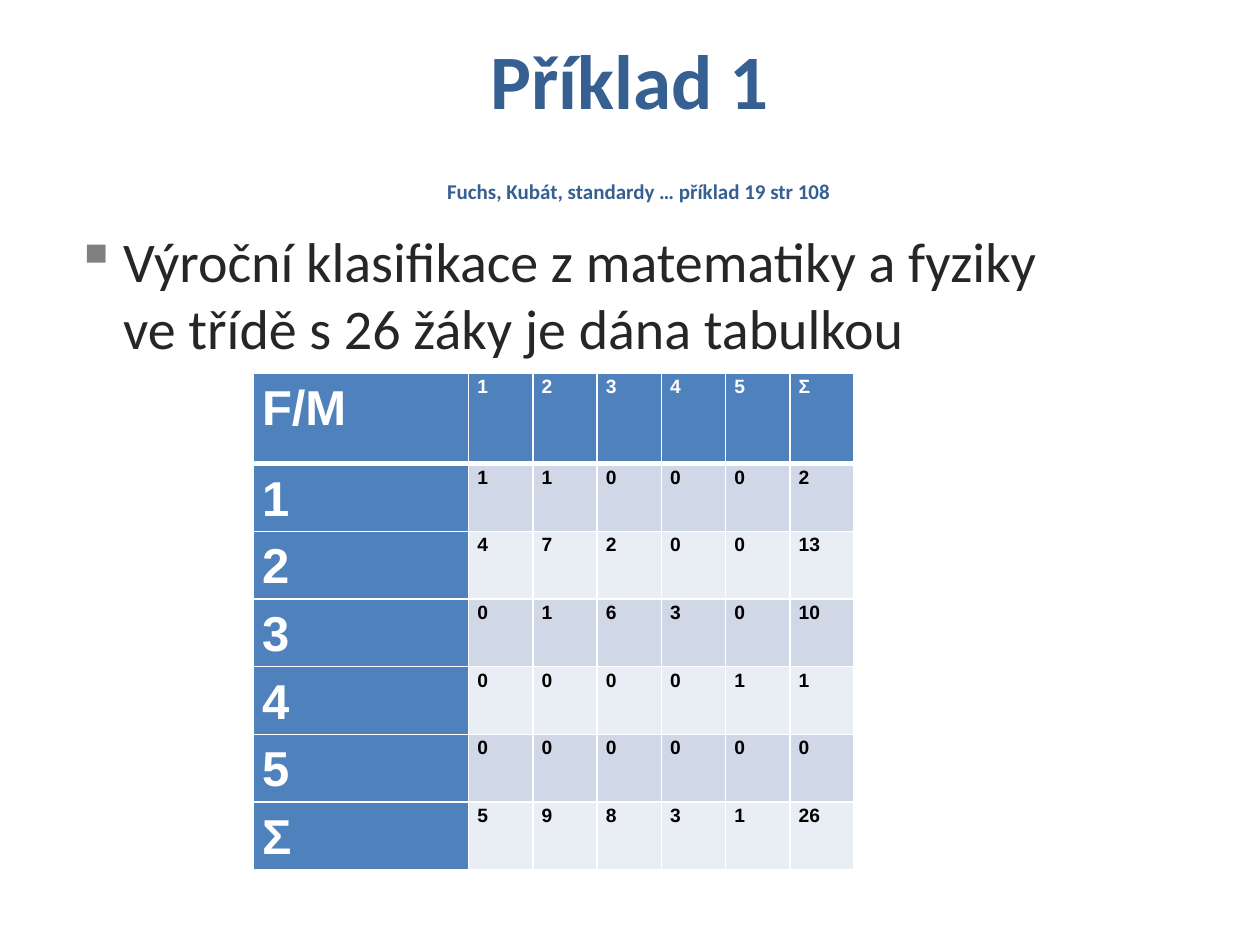
import pptx
import pptx.dml.color
import pptx.enum.text
import pptx.oxml
import pptx.oxml.ns
import pptx.util
from dataclasses import dataclass

Inches, Pt = pptx.util.Inches, pptx.util.Pt

TITLE = "Příklad 1"
SOURCE_NOTE = "Fuchs, Kubát, standardy … příklad 19 str 108"
TASK = "Výroční klasifikace z matematiky a fyziky\vve třídě s 26 žáky je dána tabulkou"
GRADES = [
    ["F/M", "1", "2", "3", "4", "5", "Σ"],
    ["1", 1, 1, 0, 0, 0, 2],
    ["2", 4, 7, 2, 0, 0, 13],
    ["3", 0, 1, 6, 3, 0, 10],
    ["4", 0, 0, 0, 0, 1, 1],
    ["5", 0, 0, 0, 0, 0, 0],
    ["Σ", 5, 9, 8, 3, 1, 26],
]


@dataclass(frozen=True)
class Theme:
    heading_font: str = "Calibri"
    table_font: str = "Arial"
    heading: str = "376092"
    body: str = "262626"
    bullet: str = "808080"
    header_fill: str = "4F81BD"
    bands: tuple = ("D0D8E8", "E9EDF4")
    light: str = "FFFFFF"
    dark: str = "000000"
    title_size: int = 44
    note_size: int = 12
    body_size: int = 32
    label_size: int = 28
    value_size: int = 11


THEME = Theme()
WIDTH, HEIGHT = 10, 7.5
MARGIN = 0.05 * WIDTH
FIRST_COLUMN, OTHER_COLUMN = 1.71, 0.51
HEADER_ROW, OTHER_ROW = 0.72, 0.5


def style(paragraph, font, size, color, bold=False):
    for run in paragraph.runs:
        run.font.name = font
        run.font.size = Pt(size)
        run.font.bold = bold
        run.font.color.rgb = pptx.dml.color.RGBColor.from_string(color)


def xml(tag, attributes="", content=""):
    namespace = pptx.oxml.ns.nsdecls("a")
    return pptx.oxml.parse_xml(f"<a:{tag} {namespace} {attributes}>{content}</a:{tag}>")


def solid(color):
    return f'<a:solidFill><a:srgbClr val="{color}"/></a:solidFill>'


def add_text_box(slide, top, height):
    box = slide.shapes.add_textbox(
        Inches(MARGIN), Inches(top), Inches(WIDTH - 2 * MARGIN), Inches(height))
    box.text_frame.word_wrap = True
    return box.text_frame


def add_title(slide):
    frame = add_text_box(slide, 0.37, 1.25)
    frame.vertical_anchor = pptx.enum.text.MSO_ANCHOR.MIDDLE
    frame.margin_bottom = Inches(0.17)
    frame.text = TITLE
    title, note = frame.paragraphs[0], frame.add_paragraph()
    note.text = SOURCE_NOTE
    note.space_before = Pt(30.5)
    note._p.get_or_add_pPr().set("marL", str(Pt(10)))
    for paragraph, size in ((title, THEME.title_size), (note, THEME.note_size)):
        paragraph.alignment = pptx.enum.text.PP_ALIGN.CENTER
        style(paragraph, THEME.heading_font, size, THEME.heading, bold=True)


def add_task(slide):
    frame = add_text_box(slide, 1.75, 5.23)
    frame.text = TASK
    paragraph = frame.paragraphs[0]
    properties = paragraph._p.get_or_add_pPr()
    properties.set("marL", str(Inches(0.38)))
    properties.set("indent", str(-Inches(0.38)))
    properties.append(xml("buClr", content=f'<a:srgbClr val="{THEME.bullet}"/>'))
    properties.append(xml("buChar", 'char="▪"'))
    style(paragraph, THEME.heading_font, THEME.body_size, THEME.body)


def add_borders(cell, row):
    """White borders, thick between the header row and the grades."""
    widths = {"lnL": 1, "lnR": 1, "lnT": 3 if row == 1 else 1, "lnB": 3 if row == 0 else 1}
    for tag, width in widths.items():
        cell._tc.get_or_add_tcPr().append(xml(tag, f'w="{Pt(width)}"', solid(THEME.light)))


def fill_cell(cell, row, column, value):
    is_header = row == 0 or column == 0
    size = THEME.label_size if column == 0 else THEME.value_size
    cell.margin_left = cell.margin_right = Inches(0.07)
    cell.margin_top = cell.margin_bottom = 0
    add_borders(cell, row)
    cell.fill.solid()
    cell.fill.fore_color.rgb = pptx.dml.color.RGBColor.from_string(
        THEME.header_fill if is_header else THEME.bands[(row - 1) % 2])
    cell.text_frame.text = str(value)
    paragraph = cell.text_frame.paragraphs[0]
    paragraph.line_spacing = 1.15
    style(paragraph, THEME.table_font, size, THEME.light if is_header else THEME.dark, bold=True)


def add_grades(slide):
    row_count, column_count = len(GRADES), len(GRADES[0])
    widths = [FIRST_COLUMN] + [OTHER_COLUMN] * (column_count - 1)
    heights = [HEADER_ROW] + [OTHER_ROW] * (row_count - 1)
    table = slide.shapes.add_table(
        row_count, column_count, Inches(2.01), Inches(2.96),
        Inches(sum(widths)), Inches(sum(heights))).table
    for column, width in zip(table.columns, widths):
        column.width = Inches(width)
    for table_row, height in zip(table.rows, heights):
        table_row.height = Inches(height)
    for row, values in enumerate(GRADES):
        for column, value in enumerate(values):
            fill_cell(table.cell(row, column), row, column, value)


def main():
    presentation = pptx.Presentation()
    presentation.slide_width, presentation.slide_height = Inches(WIDTH), Inches(HEIGHT)
    slide = presentation.slides.add_slide(presentation.slide_layouts[6])
    add_title(slide)
    add_task(slide)
    add_grades(slide)
    presentation.save("out.pptx")


if __name__ == "__main__":
    main()
